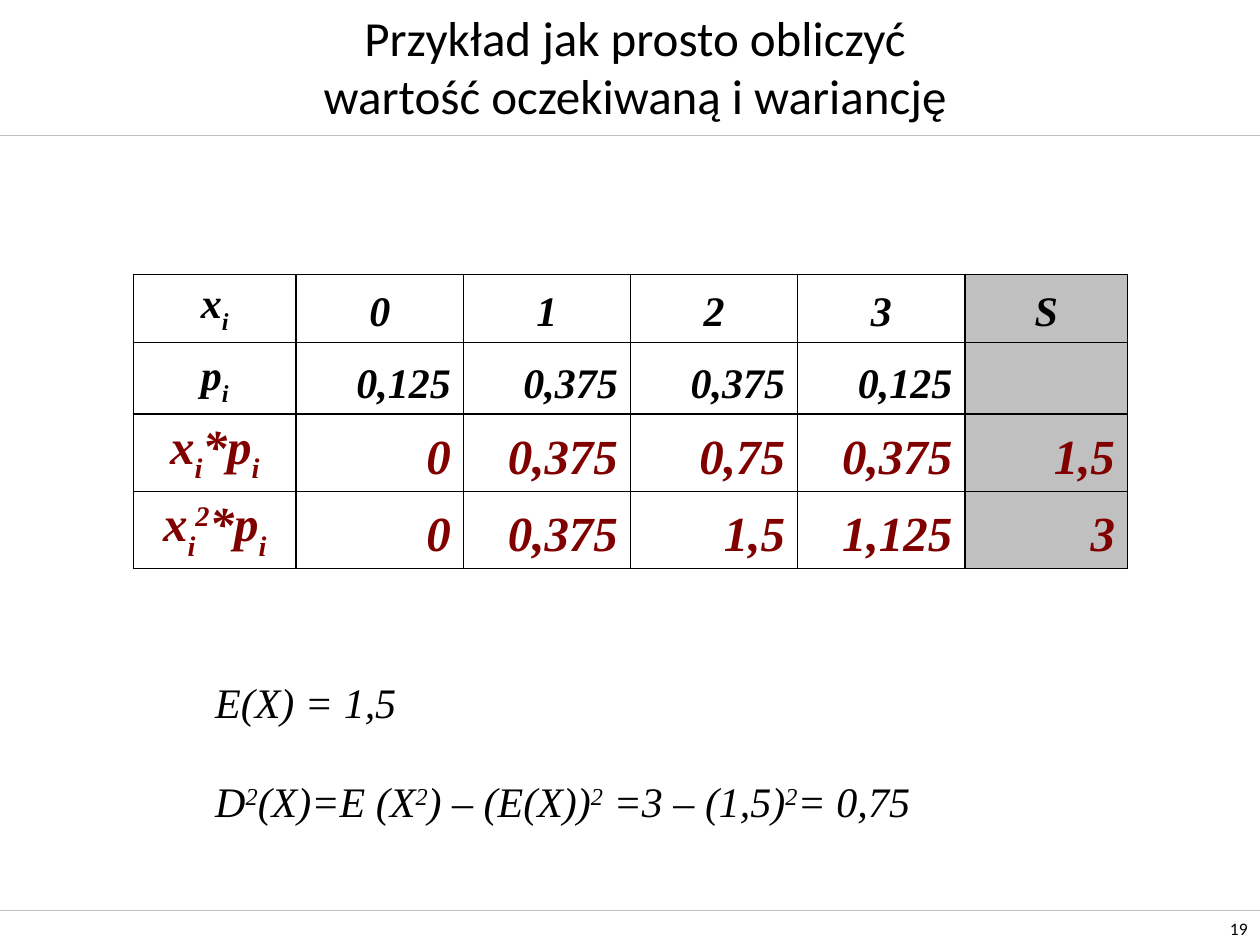
from lxml.etree import SubElement
from pptx import Presentation
from pptx.dml.color import RGBColor
from pptx.enum.text import MSO_ANCHOR as Anchor, PP_ALIGN as Align
from pptx.oxml.ns import qn
from pptx.util import Cm, Pt

SERIF = "Times New Roman"
BLACK, MAROON, GREY = "000000", "800000", "C0C0C0"
BASELINES = {"_": "-30000", "^": "30000"}


def rgb(value):
    return RGBColor.from_string(value)


def write(para, text, size=24, font=SERIF, color=BLACK, bold=False, italic=False, align=Align.LEFT):
    """Fill the paragraph; _ lowers and ^ raises the one character after it."""
    para.alignment = align
    pieces = [["", ""]]
    shift = ""
    for char in text:
        if char in BASELINES:
            shift = char
            continue
        if pieces[-1][0] != shift:
            pieces.append([shift, ""])
        pieces[-1][1] += char
        shift = ""
    for shift, piece in pieces:
        if not piece:
            continue
        span = para.add_run()
        span.text = piece
        span.font.size = Pt(size)
        span.font.name = font
        span.font.color.rgb = rgb(color)
        span.font.bold = bold
        span.font.italic = italic
        if shift:
            span.font._element.set("baseline", BASELINES[shift])


deck = Presentation()
deck.slide_width, deck.slide_height = Cm(25.4), Cm(19.05)
page = deck.slides.add_slide(deck.slide_layouts[5])

# Rules under the title and above the page number
for y in (2.72, 18.34):
    rule = page.shapes.add_connector(1, 0, Cm(y), deck.slide_width, Cm(y))
    rule.line.color.rgb = rgb(GREY)
    rule.line.width = Pt(0.25)
    SubElement(rule._element.spPr, qn("a:effectLst"))

# Title
title = page.shapes.title
title.left, title.top, title.width, title.height = Cm(2.4), Cm(0.53), Cm(20.8), Cm(1.6)
title.text_frame.vertical_anchor = Anchor.MIDDLE
heading = title.text_frame.paragraphs[0]
write(heading, "Przykład jak prosto obliczyć", 28, "Calibri", align=Align.CENTER)
heading.add_line_break()
write(heading, "wartość oczekiwaną i wariancję", 28, "Calibri", align=Align.CENTER)

# Distribution table: text size, colour, cells
rows = [
    (24, BLACK, ["x_i", "0", "1", "2", "3", "S"]),
    (24, BLACK, ["p_i", "0,125", "0,375", "0,375", "0,125", ""]),
    (28, MAROON, ["x_i*p_i", "0", "0,375", "0,75", "0,375", "1,5"]),
    (28, MAROON, ["x_i^2*p_i", "0", "0,375", "1,5", "1,125", "3"]),
]
widths = [3.28, 3.37, 3.37, 3.37, 3.37, 3.28]
heights = [1.37, 1.45, 1.55, 1.55]
frame = page.shapes.add_table(len(rows), len(widths), Cm(2.69), Cm(5.53),
                              Cm(sum(widths)), Cm(sum(heights)))
table = frame.table
for column, width in zip(table.columns, widths):
    column.width = Cm(width)
for r, (size, color, texts) in enumerate(rows):
    table.rows[r].height = Cm(heights[r])
    for c, text in enumerate(texts):
        cell = table.cell(r, c)
        cell.vertical_anchor = Anchor.BOTTOM
        align = Align.CENTER if r == 0 or c == 0 else Align.RIGHT
        write(cell.text_frame.paragraphs[0], text, size, color=color,
              bold=True, italic=True, align=align)
        properties = cell._tc.get_or_add_tcPr()
        for side in ("lnL", "lnR", "lnT", "lnB"):
            border = SubElement(properties, qn(f"a:{side}"), w=str(Pt(1)))
            SubElement(SubElement(border, qn("a:solidFill")), qn("a:srgbClr"), val=BLACK)
        cell.fill.solid()
        cell.fill.fore_color.rgb = rgb(GREY if c == len(widths) - 1 else "FFFFFF")

# Expected value and variance
results = page.shapes.add_textbox(Cm(4.09), Cm(13.51), Cm(14.73), Cm(4.37)).text_frame
results.word_wrap = False
write(results.paragraphs[0], "E(X) = 1,5", italic=True)
variance = results.add_paragraph()
variance.space_before = Pt(28)
write(variance, "D^2(X)=E (X^2) – (E(X))^2 =3 – (1,5)^2= 0,75", italic=True)

# Page number
number = page.shapes.add_textbox(Cm(24.1), Cm(18.34), Cm(1.3), Cm(0.71)).text_frame
number.word_wrap = True
number.vertical_anchor = Anchor.BOTTOM
write(number.paragraphs[0], "19", 10, "Calibri", align=Align.RIGHT)

deck.save("out.pptx")
